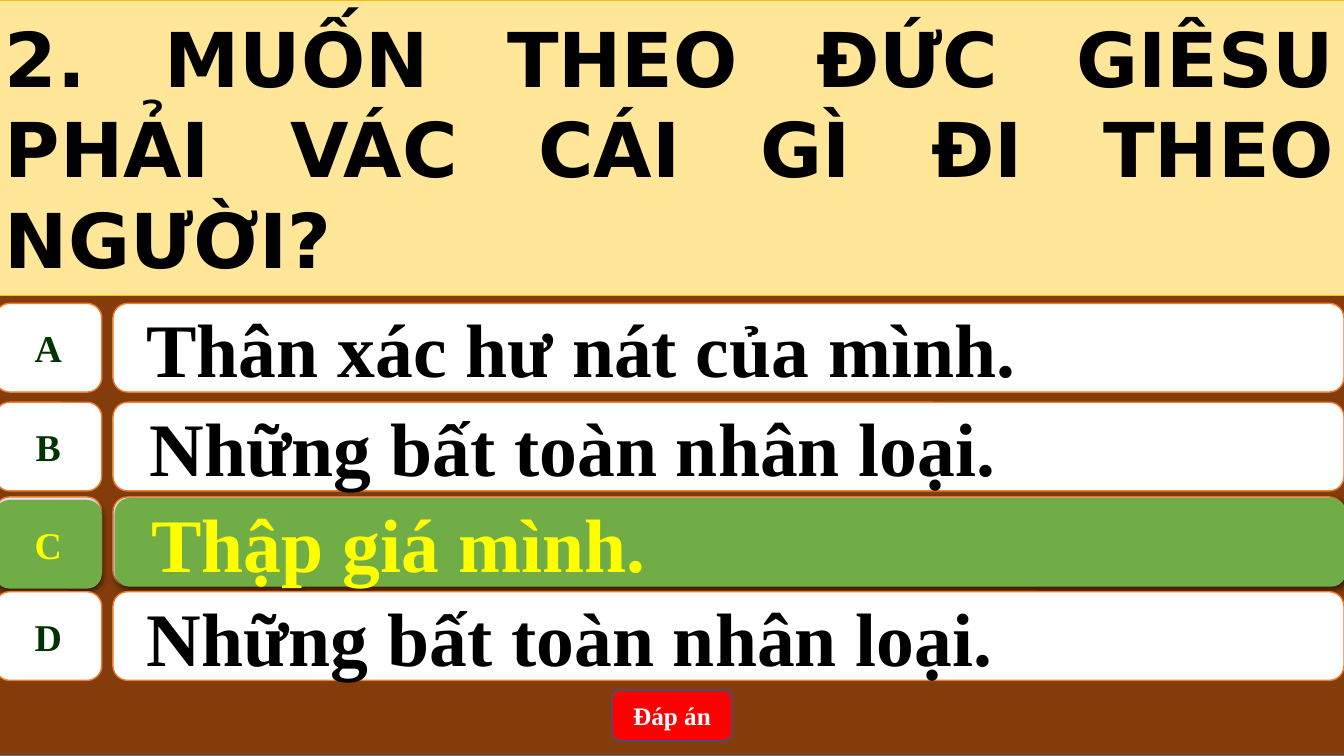
from lxml.etree import SubElement
from pptx import Presentation
from pptx.dml.color import RGBColor
from pptx.enum.shapes import MSO_SHAPE
from pptx.enum.text import MSO_ANCHOR, PP_ALIGN
from pptx.oxml.ns import qn
from pptx.util import Inches, Pt

COLORS = {
    "brown": "843C0B", "frame": "43739E", "white": "FFFFFF", "orange": "ED7D31",
    "letter": "003300", "black": "000000", "cream": "FFE699", "gold": "FFC000",
    "red": "FF0000", "navy": "325491", "green": "70AD47", "yellow": "FFFF00",
}
SERIF = "Times New Roman"

# Grid: a letter column, an answer column and four rows
LEFT, FULL_WIDTH, HEIGHT = -0.05, 13.39, 7.5
ANSWER_LEFT, ANSWER_WIDTH = 1.12, 12.21
LETTER_WIDTH, ROW_HEIGHT = 1.06, 0.88
LETTER_SHAPE = MSO_SHAPE.FLOWCHART_ALTERNATE_PROCESS
ANSWER_SHAPE = MSO_SHAPE.ROUNDED_RECTANGLE


def add_panel(kind, box, fill, line=None, line_width=1):
    shape = slide.shapes.add_shape(kind, *[Inches(length) for length in box])
    shape.shadow.inherit = False
    shape.fill.solid()
    shape.fill.fore_color.rgb = RGBColor.from_string(COLORS[fill])
    if line:
        shape.line.color.rgb = RGBColor.from_string(COLORS[line])
        shape.line.width = Pt(line_width)
    else:
        shape.line.fill.background()
    return shape


def write(shape, text, size, color, align=PP_ALIGN.CENTER, name=SERIF, indent=0, wrap=True):
    frame = shape.text_frame
    frame.word_wrap = wrap
    frame.vertical_anchor = MSO_ANCHOR.MIDDLE
    frame.margin_left = Inches(0.1 + indent)
    paragraph = frame.paragraphs[0]
    paragraph.alignment = align
    run = paragraph.add_run()
    run.text = text
    for attribute, value in {"size": Pt(size), "bold": True, "name": name}.items():
        setattr(run.font, attribute, value)
    run.font.color.rgb = RGBColor.from_string(COLORS[color])


presentation = Presentation()
presentation.slide_width = Inches(13.33)
presentation.slide_height = Inches(HEIGHT)
slide = presentation.slides.add_slide(presentation.slide_layouts[6])

# Background
add_panel(MSO_SHAPE.RECTANGLE, (LEFT, 0, FULL_WIDTH, HEIGHT), "brown", "frame")

# Question
question = add_panel(MSO_SHAPE.RECTANGLE, (LEFT, 0, FULL_WIDTH, 2.93), "cream", "gold", 0.5)
write(question, "2. MUỐN THEO ĐỨC GIÊSU PHẢI VÁC CÁI GÌ ĐI THEO NGƯỜI?", 54, "black",
      PP_ALIGN.JUSTIFY, "DejaVu Sans")

# Answer rows: letter, top, text, indent
answers = [
    ("A", 3.01, "Thân xác hư nát của mình.", 0.19),
    ("B", 3.99, "Những bất toàn nhân loại.", 0.22),
    ("C", 4.93, "Thập giá mình.", 0.22),
    ("D", 5.87, "Những bất toàn nhân loại.", 0.19),
]
for letter, top, text, indent in answers:
    letter_box = add_panel(LETTER_SHAPE, (LEFT, top, LETTER_WIDTH, ROW_HEIGHT), "white", "orange")
    answer_box = add_panel(ANSWER_SHAPE, (ANSWER_LEFT, top, ANSWER_WIDTH, ROW_HEIGHT),
                           "white", "orange")
    letter_color, answer_color = "letter", "black"

    # The right answer gets green panels with a soft shadow
    if letter == "C":
        answer_box = add_panel(ANSWER_SHAPE, (ANSWER_LEFT + 0.02, top + 0.01,
                                              ANSWER_WIDTH, ROW_HEIGHT), "green")
        letter_box = add_panel(LETTER_SHAPE, (LEFT, top + 0.03, LETTER_WIDTH, ROW_HEIGHT), "green")
        letter_color = answer_color = "yellow"
        for shape in (answer_box, letter_box):
            effects = shape.element.spPr.find(qn("a:effectLst"))
            shadow = SubElement(effects, qn("a:outerShdw"), blurRad=str(Pt(4.5)),
                                dist=str(Pt(1.5)), dir="5400000", rotWithShape="0")
            shadow_color = SubElement(shadow, qn("a:srgbClr"), val=COLORS["black"])
            SubElement(shadow_color, qn("a:alpha"), val="63000")

    write(letter_box, letter, 27, letter_color, wrap=False)
    write(answer_box, text, 54, answer_color, PP_ALIGN.LEFT, indent=indent)

# Answer button
button = add_panel(MSO_SHAPE.ROUNDED_RECTANGLE, (6.07, 6.85, 1.19, 0.5), "red", "navy")
write(button, "Đáp án", 18, "white")

presentation.save("out.pptx")
